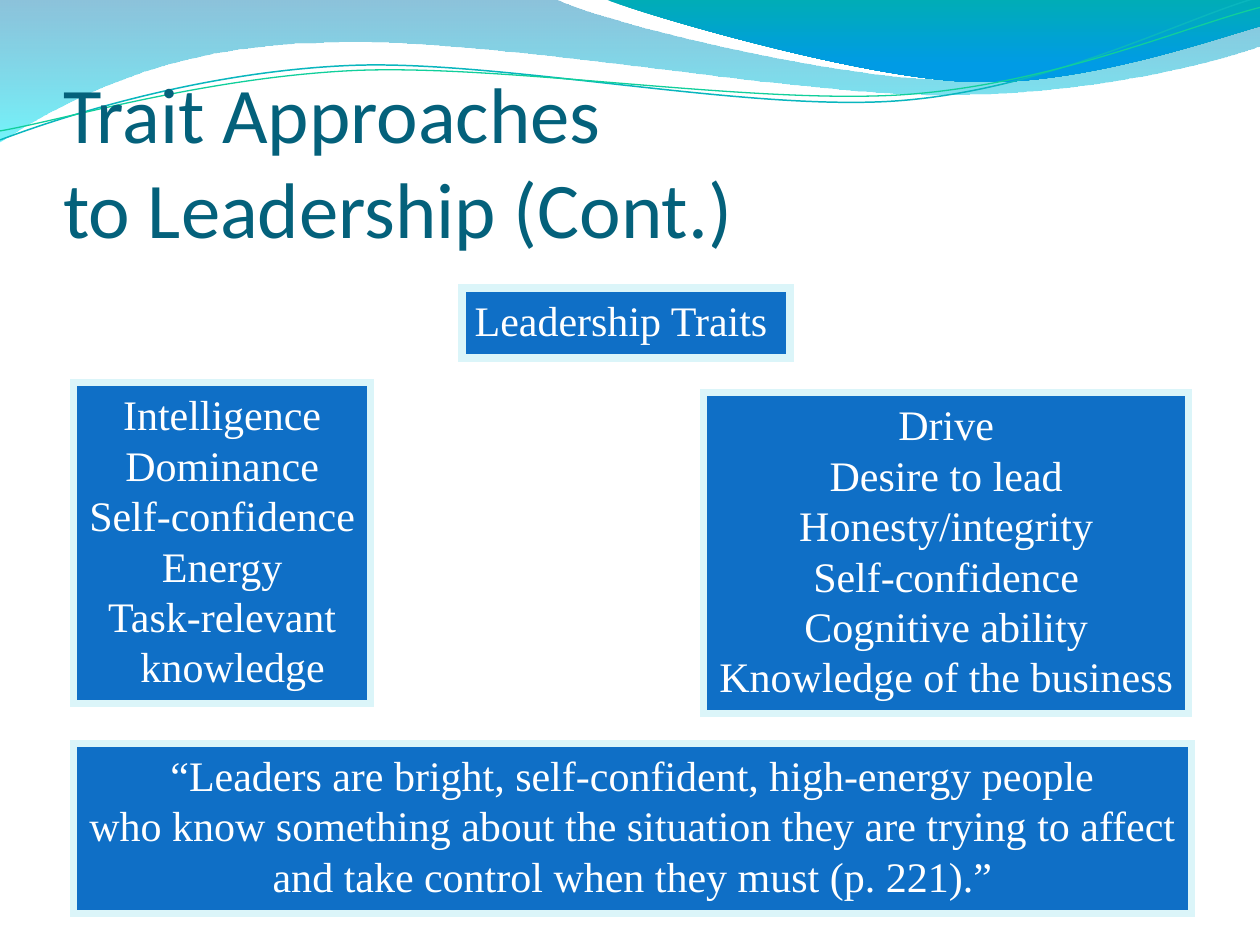
from math import cos, radians, sin

from lxml.etree import SubElement
from pptx import Presentation
from pptx.dml.color import RGBColor
from pptx.enum.shapes import MSO_SHAPE
from pptx.enum.text import MSO_ANCHOR, MSO_AUTO_SIZE, PP_ALIGN
from pptx.oxml.ns import qn
from pptx.util import Cm, Pt

COLORS = {
    "title": "04617B", "box": "0F6FC6", "border": "DBF5F9", "text": "FFFFFF",
    "wave_top": "0079AF", "wave_bottom": "00EBF8",
    "crest_top": "00ADB6", "crest_bottom": "009BE5",
    "teal": "09B6BE", "green": "10CF9B",
}
TILT = 2.7  # degrees, anticlockwise, of the two thin lines

# Outlines in cm: pairs are corners, sixes are Bezier curves
WAVE = [(0, -0.03), (11.18, -0.03),
        (12.09, 0.43, 16.87, 1.6, 19.25, 1.6),
        (21.67, 1.6, 24.33, 0.66, 25.4, 0.23), (25.43, 0.91),
        (24.97, 1.12, 22.1, 1.93, 18.95, 1.91),
        (15.8, 1.91, 9.7, 0.71, 6.53, 0.86),
        (3.28, 0.89, 1.17, 2.11, -0.03, 2.87), (0, -0.03)]
CREST = [(12.17, -0.03),
         (12.93, 0.28, 17.32, 1.57, 19.53, 1.65),
         (21.74, 1.75, 24.41, 0.81, 25.4, 0.53), (25.4, 0), (12.17, -0.03)]
TEAL_LINE = [(0, 2.82),
             (1.22, 2.36, 4.01, 1.45, 7.04, 1.32),
             (10.03, 1.19, 15.06, 2.26, 18.11, 2.03),
             (21.16, 1.8, 23.83, 0.38, 25.35, -0.05)]
GREEN_LINE = [(0, 2.64),
              (1.19, 2.44, 4.17, 1.55, 7.19, 1.42),
              (10.24, 1.3, 15.16, 2.11, 18.21, 1.91),
              (21.23, 1.7, 23.9, 0.53, 25.4, 0.15)]


def color(name):
    return RGBColor.from_string(COLORS[name])


def pairs(seg):
    return list(zip(seg[::2], seg[1::2]))


def turn(point, centre, degrees):
    """Turn a point clockwise about a centre."""
    a = radians(degrees)
    dx, dy = point[0] - centre[0], point[1] - centre[1]
    return (centre[0] + dx * cos(a) - dy * sin(a),
            centre[1] + dx * sin(a) + dy * cos(a))


def write(tf, lines, size=24, font="Times New Roman", fill="text",
          align=PP_ALIGN.CENTER, margins=(0.25, 0.13, 0.25, 0.13),
          anchor=MSO_ANCHOR.TOP, fit=MSO_AUTO_SIZE.SHAPE_TO_FIT_TEXT):
    tf.word_wrap = True
    tf.auto_size = fit
    tf.vertical_anchor = anchor
    (tf.margin_left, tf.margin_top,
     tf.margin_right, tf.margin_bottom) = map(Cm, margins)
    for i, line in enumerate(lines):
        p = tf.paragraphs[0] if i == 0 else tf.add_paragraph()
        p.text = line
        p.alignment = align
        for r in p.runs:
            r.font.size = Pt(size)
            r.font.name = font
            r.font.color.rgb = color(fill)


class Deck:
    def __init__(self):
        self.prs = Presentation()
        self.prs.slide_width, self.prs.slide_height = Cm(25.4), Cm(19.05)
        self.s = self.prs.slides.add_slide(self.prs.slide_layouts[5])

    def outline(self, segments, close):
        """Draw the corners, then bend the sides that are curves."""
        first, *ends = [(Cm(x), Cm(y))
                        for x, y in (pairs(seg)[-1] for seg in segments)]
        builder = self.s.shapes.build_freeform(*first, scale=1.0)
        builder.add_line_segments(ends, close=close)
        sp = builder.convert_to_shape()
        sp.shadow.inherit = False
        sides = list(sp._element.iter(qn("a:lnTo")))
        for side, seg in zip(sides, segments[1:]):
            if len(seg) == 6:
                curve = side.makeelement(qn("a:cubicBezTo"))
                for x, y in pairs(seg):
                    SubElement(curve, qn("a:pt"), x=str(Cm(x) - sp.left),
                               y=str(Cm(y) - sp.top))
                side.getparent().replace(side, curve)
        return sp

    def wave(self, segments, stops):
        """Closed shape; each stop is (position, colour, opacity in %)."""
        sp = self.outline(segments, True)
        sp.line.fill.background()
        sp.fill.gradient()
        sp.fill.gradient_angle = 270
        for stop, (position, name, _) in zip(sp.fill.gradient_stops, stops):
            stop.position = position
            stop.color.rgb = color(name)
        clrs = sp._element.spPr.iter(qn("a:srgbClr"))
        for clr, (_, _, opacity) in zip(clrs, stops):
            if opacity < 100:
                SubElement(clr, qn("a:alpha"), val=str(opacity * 1000))

    def curve(self, segments, centre, name, width):
        """Thin open line, laid out level and then tilted."""
        level = [sum((turn(pt, centre, TILT) for pt in pairs(seg)), ())
                 for seg in segments]
        sp = self.outline(level, False)
        sp.rotation = 360 - TILT
        sp.fill.background()
        sp.line.color.rgb = color(name)
        sp.line.width = Pt(width)

    def title(self, text, left, top, width, height):
        sp = self.s.shapes.title
        sp.left, sp.top, sp.width, sp.height = map(
            Cm, (left, top, width, height))
        write(sp.text_frame, [text], size=45, font="Calibri", fill="title",
              align=PP_ALIGN.LEFT, margins=(0, 0.13, 0, 0),
              anchor=MSO_ANCHOR.BOTTOM, fit=MSO_AUTO_SIZE.NONE)
        self.s.shapes._spTree.append(sp._element)  # in front of the waves

    def box(self, lines, left, top, width, height, border=4, **style):
        sp = self.s.shapes.add_shape(
            MSO_SHAPE.RECTANGLE, *map(Cm, (left, top, width, height)))
        sp.shadow.inherit = False
        sp.fill.solid()
        sp.fill.fore_color.rgb = color("box")
        sp.line.color.rgb = color("border")
        sp.line.width = Pt(border)
        SubElement(sp.line._ln, qn("a:miter"), lim="800000")  # sharp corners
        write(sp.text_frame, lines, **style)
        return sp


def main():
    deck = Deck()

    # Waves along the top
    deck.wave(WAVE, [(0, "wave_top", 45), (1, "wave_bottom", 55)])
    deck.wave(CREST, [(0, "crest_top", 100), (0.8, "crest_bottom", 100)])
    deck.curve(TEAL_LINE, (12.67, 1.46), "teal", 0.85)
    deck.curve(GREEN_LINE, (12.69, 1.5), "green", 0.75)

    # Title
    deck.title("Trait Approaches\vto Leadership (Cont.)",
               1.27, 1.94, 23.06, 3.18)

    # Two lists of traits
    traits = deck.box(
        ["Intelligence", "Dominance", "Self-confidence", "Energy",
         "Task-relevant", "knowledge"], 1.48, 7.71, 6, 6.48)
    last = traits.text_frame.paragraphs[-1]
    last._p.get_or_add_pPr().set("marL", str(Cm(0.42)))
    deck.box(["Drive", "Desire to lead", "Honesty/integrity",
              "Self-confidence", "Cognitive ability",
              "Knowledge of the business"], 14.18, 7.91, 9.79, 6.48)

    # Quotation
    deck.box(["“Leaders are bright, self-confident, high-energy people",
              "who know something about the situation they are trying to affect",
              "and take control when they must (p. 221).”"],
             1.48, 14.98, 22.54, 3.43)

    # Heading of the lists
    deck.box(["Leadership Traits"], 9.32, 5.8, 6.6, 1.42, border=4.5,
             align=PP_ALIGN.LEFT)

    deck.prs.save("out.pptx")


if __name__ == "__main__":
    main()
